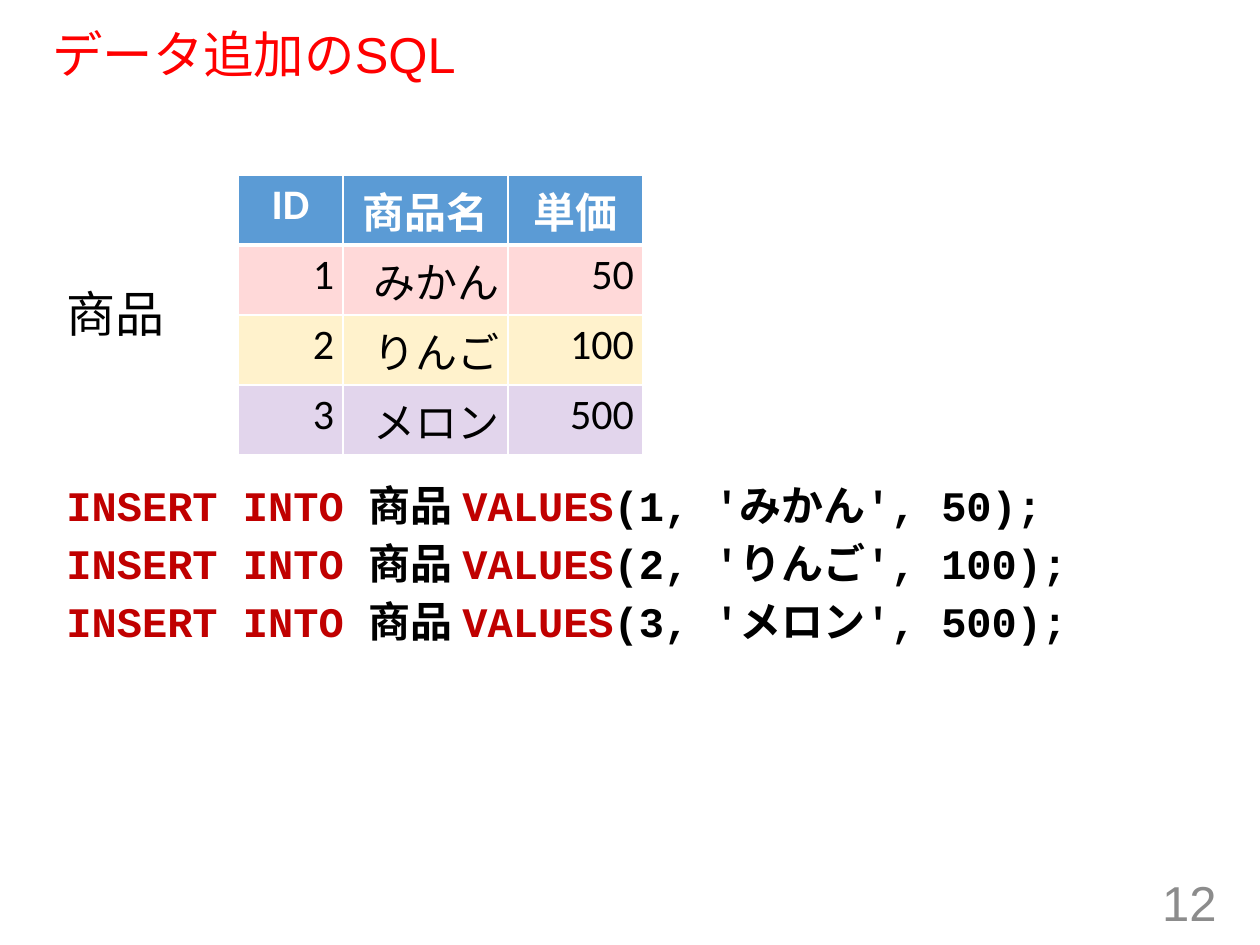
from lxml.etree import SubElement
from pptx import Presentation
from pptx.dml.color import RGBColor
from pptx.enum.text import MSO_ANCHOR as Anchor, PP_ALIGN as Align
from pptx.oxml import parse_xml
from pptx.oxml.ns import nsdecls, qn
from pptx.util import Emu, Pt

PX_PER_INCH = 126
COLORS = {
    "title": "FF0000", "number": "8C8C8C", "text": "000000",
    "keyword": "C00000", "white": "FFFFFF", "header": "5B9BD5",
    "red": "FF0000", "amber": "FFC000", "purple": "7030A0",
}
COLUMN_WIDTHS = (105, 165, 135)
ROW_HEIGHT = 70
HEADINGS = ("ID", "商品名", "単価")
# Product rows with their tint and its opacity in percent
PRODUCTS = (
    (("1", "みかん", "50"), "red", 15),
    (("2", "りんご", "100"), "amber", 20),
    (("3", "メロン", "500"), "purple", 20),
)


def px(length):
    return Emu(round(length * 914400 / PX_PER_INCH))


def add_span(para, text, color, **font_values):
    span = para.add_run()
    span.text = text
    span.font.color.rgb = RGBColor.from_string(COLORS[color])
    for name, value in font_values.items():
        setattr(span.font, name, value)


def add_text(page, box, lines, anchor=Anchor.TOP, para_format=None, **font_values):
    """Add a text box; each line is a list of (text, color) spans."""
    frame = page.shapes.add_textbox(*map(px, box)).text_frame
    frame.word_wrap = True
    frame.vertical_anchor = anchor
    for index, spans in enumerate(lines):
        para = frame.add_paragraph() if index else frame.paragraphs[0]
        for name, value in (para_format or {}).items():
            setattr(para, name, value)
        for text, color in spans:
            add_span(para, text, color, **font_values)


def add_title(page, box):
    add_text(page, box, [[("データ追加のSQL", "title")]], Anchor.MIDDLE,
             {"line_spacing": 0.9}, name="Arial", size=Pt(28.8))


def add_page_number(page, box):
    add_text(page, box, [[("12", "number")]], Anchor.MIDDLE,
             {"alignment": Align.RIGHT}, name="Arial", size=Pt(28))


def add_table_label(page, box):
    add_text(page, box, [[("商品", "text")]], Anchor.TOP,
             {"line_spacing": 0.9}, name="Arial", size=Pt(28))


def add_statements(page, box):
    lines = [
        [("INSERT INTO ", "keyword"), ("商品 ", "text"), ("VALUES", "keyword"),
         (f"({number}, '{name}', {price});", "text")]
        for (number, name, price), _, _ in PRODUCTS
    ]
    add_text(page, box, lines, Anchor.TOP,
             {"line_spacing": 0.9, "space_before": Pt(7.3)},
             name="Courier New", size=Pt(24), bold=True)


def set_borders(cell, widths):
    """Give the cell white borders; widths maps L, R, T and B to points."""
    properties = cell._tc.get_or_add_tcPr()
    for index, (side, width) in enumerate(widths.items()):
        properties.insert(index, parse_xml(
            f'<a:ln{side} {nsdecls("a")} w="{Pt(width)}"><a:solidFill>'
            f'<a:srgbClr val="{COLORS["white"]}"/></a:solidFill></a:ln{side}>'))


def fill_cell(cell, color, opacity):
    cell.fill.solid()
    cell.fill.fore_color.rgb = RGBColor.from_string(COLORS[color])
    if opacity < 100:
        tint = cell._tc.tcPr.find(f"{qn('a:solidFill')}/{qn('a:srgbClr')}")
        SubElement(tint, qn("a:alpha")).set("val", str(opacity * 1000))


def add_product_table(page, left, top):
    rows = ((HEADINGS, "header", 100), *PRODUCTS)
    table = page.shapes.add_table(
        len(rows), len(COLUMN_WIDTHS), px(left), px(top),
        px(sum(COLUMN_WIDTHS)), px(ROW_HEIGHT * len(rows))).table
    table.horz_banding = False
    for column, width in zip(table.columns, COLUMN_WIDTHS):
        column.width = px(width)
    margins = {"margin_left": 9, "margin_right": 9,
               "margin_top": 5, "margin_bottom": 5}
    for row, (texts, color, opacity) in enumerate(rows):
        table.rows[row].height = px(ROW_HEIGHT)
        is_header = row == 0
        for column, text in enumerate(texts):
            cell = table.cell(row, column)
            for name, value in margins.items():
                setattr(cell, name, px(value))
            para = cell.text_frame.paragraphs[0]
            para.alignment = Align.CENTER if is_header else Align.RIGHT
            add_span(para, text, "white" if is_header else "text",
                     name="Calibri", size=Pt(24), bold=is_header)
            fill_cell(cell, color, opacity)
            set_borders(cell, {"L": 1, "R": 1, "T": 3 if row == 1 else 1,
                               "B": 3 if is_header else 1})


def main():
    deck = Presentation()
    deck.slide_width, deck.slide_height = px(1260), px(945)
    page = deck.slides.add_slide(deck.slide_layouts[6])
    add_title(page, (40, 25, 1166, 64))
    add_page_number(page, (945, 877, 284, 50))
    add_table_label(page, (54, 284, 195, 102))
    add_statements(page, (54, 479, 1166, 340))
    add_product_table(page, 238, 175)
    deck.save("out.pptx")


if __name__ == "__main__":
    main()
